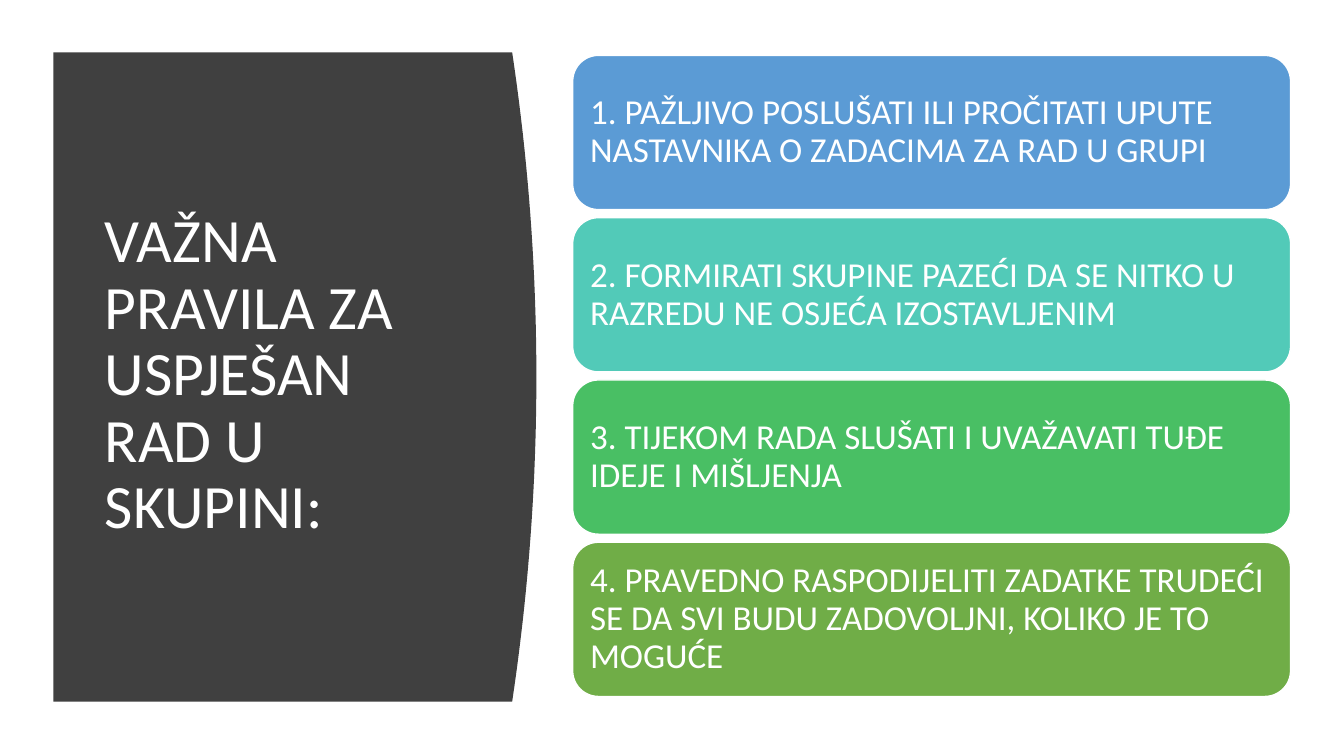
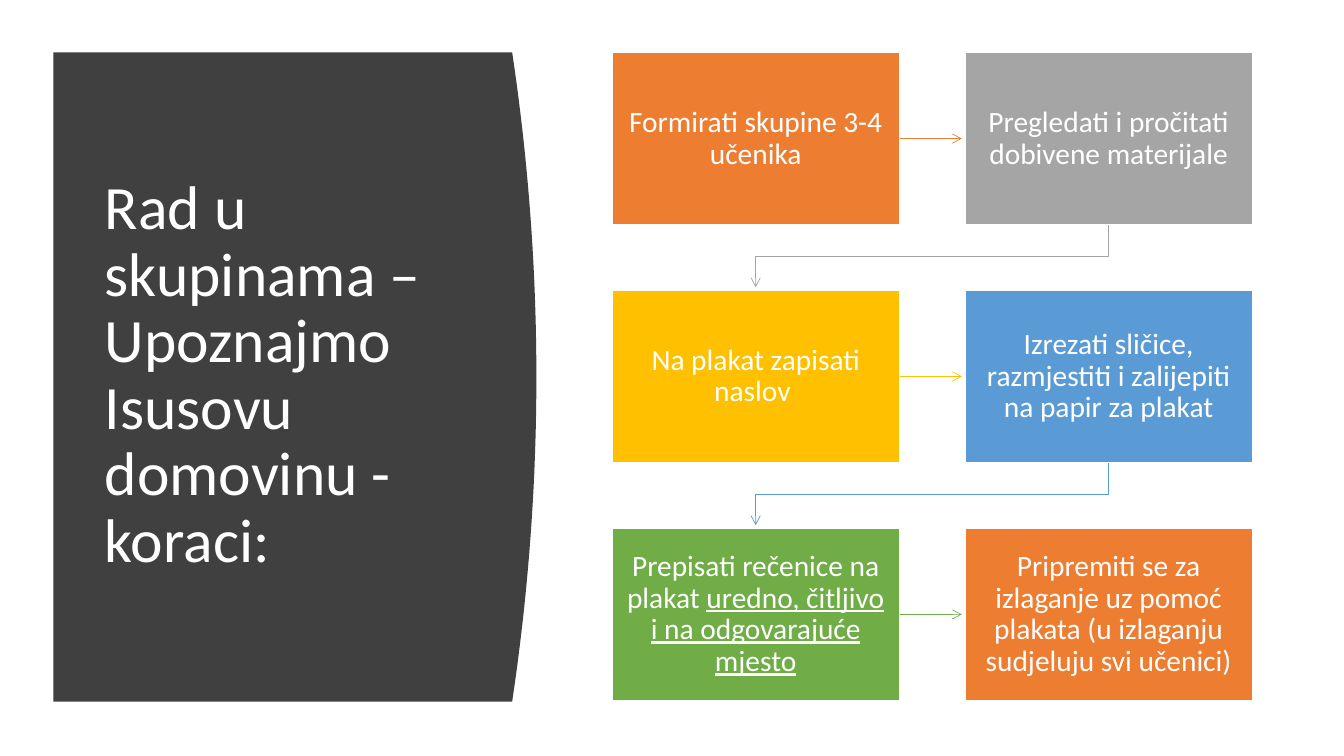
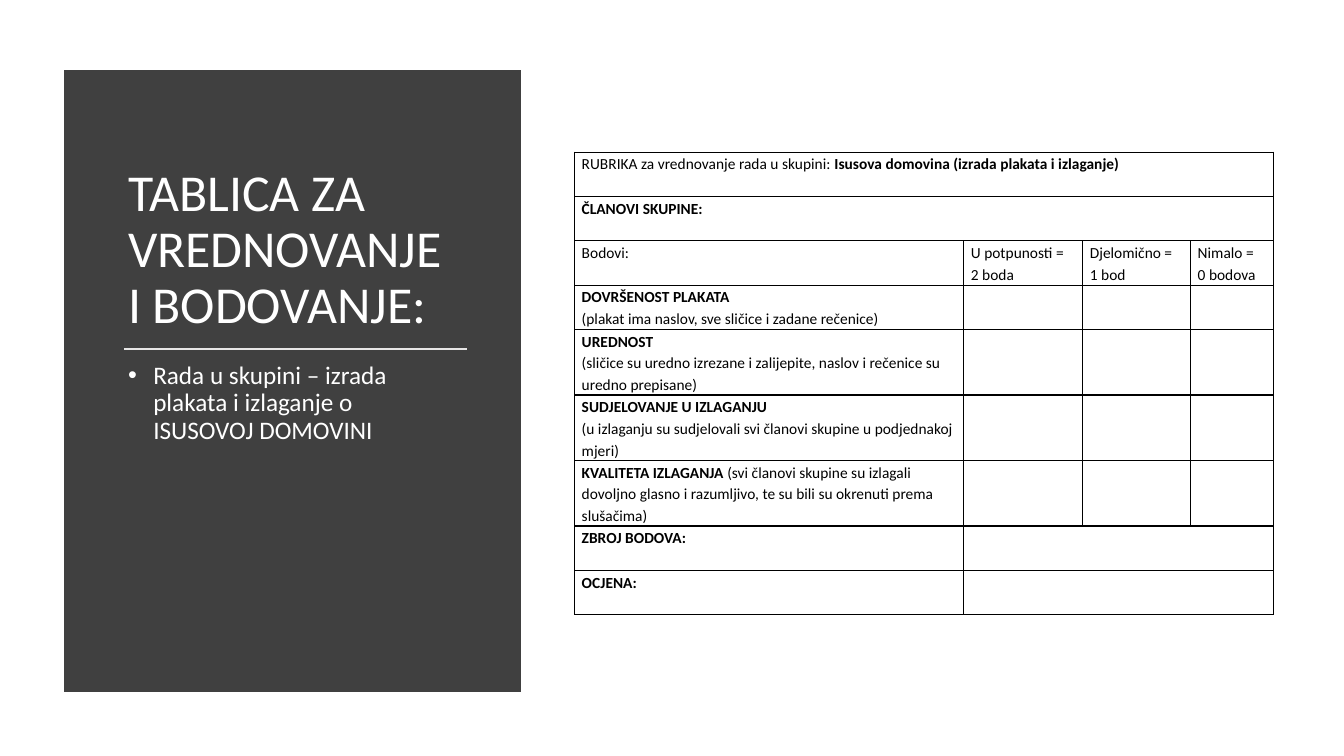
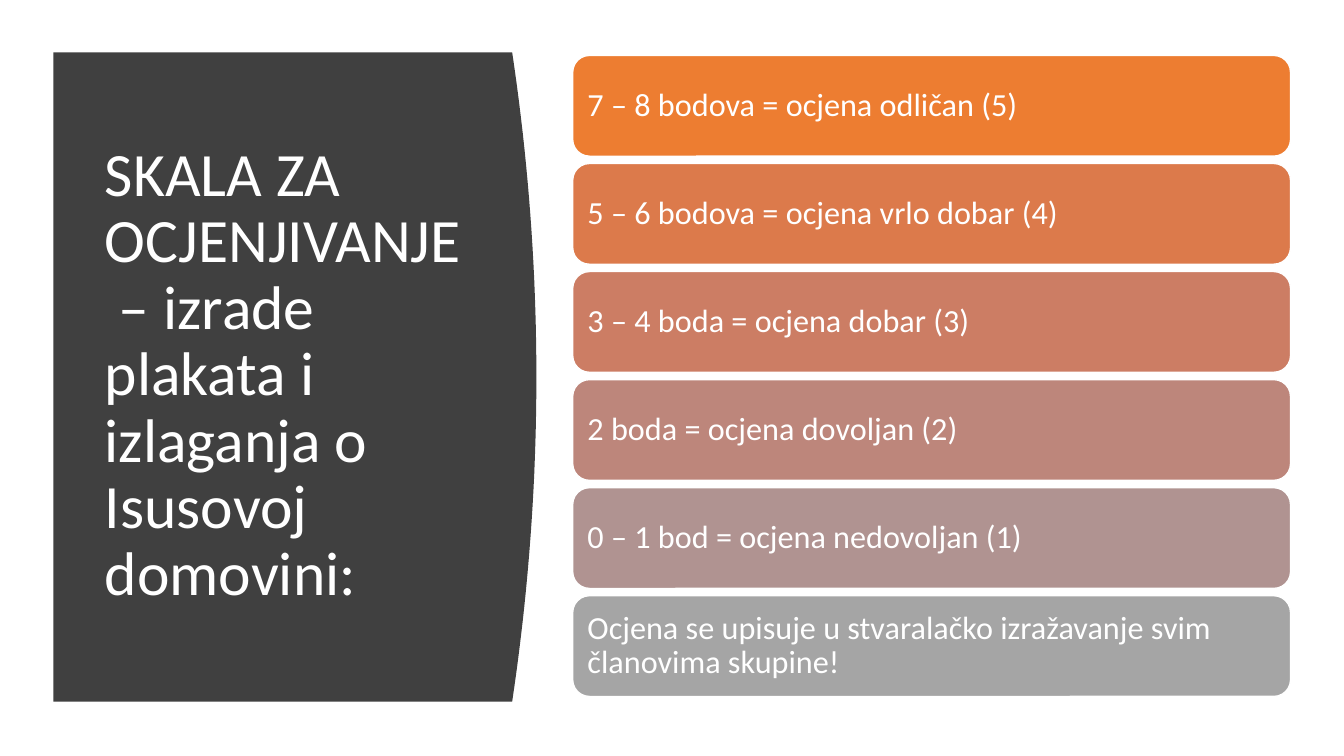
"""Build four slides on the rules, steps and grading of group work."""
from dataclasses import dataclass

import lxml.etree
import pptx
import pptx.dml.color
import pptx.enum.shapes
import pptx.enum.text
import pptx.oxml.ns
import pptx.presentation
import pptx.shapes.autoshape
import pptx.shapes.connector
import pptx.slide
import pptx.table
import pptx.text.text
import pptx.util

Inches = pptx.util.Inches
Pt = pptx.util.Pt
RGBColor = pptx.dml.color.RGBColor
Anchor = pptx.enum.text.MSO_ANCHOR
Align = pptx.enum.text.PP_ALIGN
Preset = pptx.enum.shapes.MSO_SHAPE
Link = pptx.enum.shapes.MSO_CONNECTOR
qn = pptx.oxml.ns.qn

FONT = "Calibri"
WHITE = RGBColor(0xFF, 0xFF, 0xFF)
BLACK = RGBColor(0x00, 0x00, 0x00)
CHARCOAL = RGBColor(0x40, 0x40, 0x40)
PALE = RGBColor(0xE7, 0xE6, 0xE6)
ORANGE = RGBColor(0xED, 0x7D, 0x31)
GREY = RGBColor(0xA5, 0xA5, 0xA5)
GOLD = RGBColor(0xFF, 0xC0, 0x00)
BLUE = RGBColor(0x5B, 0x9B, 0xD5)
GREEN = RGBColor(0x70, 0xAD, 0x47)
TEAL = RGBColor(0x52, 0xCA, 0xB8)
EMERALD = RGBColor(0x49, 0xBF, 0x64)
COPPER = RGBColor(0xDC, 0x7A, 0x4B)
CLAY = RGBColor(0xCC, 0x7D, 0x64)
ROSE = RGBColor(0xBD, 0x86, 0x7B)
MAUVE = RGBColor(0xB0, 0x93, 0x91)

TITLE_ONLY = 5
TITLE_AND_BODY = 1


@dataclass(frozen=True)
class Box:
    """A rectangle in inches."""

    left: float
    top: float
    width: float
    height: float

    def lengths(self) -> tuple[pptx.util.Length, ...]:
        """Return the four measures as lengths."""
        return tuple(Inches(v) for v in (self.left, self.top, self.width, self.height))


@dataclass(frozen=True)
class Card:
    """A coloured block of text, with an optional underlined ending."""

    text: str
    color: RGBColor
    underlined: str = ""


@dataclass(frozen=True)
class Run:
    """A piece of table text."""

    text: str
    bold: bool = False


Line = tuple[Run, ...]
CellLines = tuple[Line, ...]

PANEL = Box(0.53, 0.52, 4.55, 6.44)
PANEL_BULGE = 0.24
PANEL_STEPS = 40
TITLE_BOX = Box(0.94, 1.11, 3.74, 5.24)
STACK = Box(5.68, 0.55, 7.12, 6.36)
FLOW = Box(6.07, 0.52, 2.85, 1.71)
FLOW_COLUMNS = 2
FLOW_PITCH_X = 3.5
FLOW_PITCH_Y = 2.36
ARROW_LENGTH = 0.62

RULES = (
    Card("1. PAŽLJIVO POSLUŠATI ILI PROČITATI UPUTE NASTAVNIKA O ZADACIMA ZA RAD U GRUPI", BLUE),
    Card("2. FORMIRATI SKUPINE PAZEĆI DA SE NITKO U RAZREDU NE OSJEĆA IZOSTAVLJENIM", TEAL),
    Card("3. TIJEKOM RADA SLUŠATI I UVAŽAVATI TUĐE IDEJE I MIŠLJENJA", EMERALD),
    Card("4. PRAVEDNO RASPODIJELITI ZADATKE TRUDEĆI SE DA SVI BUDU ZADOVOLJNI, KOLIKO JE TO MOGUĆE", GREEN),
)
STEPS = (
    Card("Formirati skupine 3-4 učenika", ORANGE),
    Card("Pregledati i pročitati dobivene materijale", GREY),
    Card("Na plakat zapisati naslov ", GOLD),
    Card("Izrezati sličice, razmjestiti i zalijepiti na papir za plakat", BLUE),
    Card("Prepisati rečenice na plakat ", GREEN, "uredno, čitljivo i na odgovarajuće mjesto"),
    Card("Pripremiti se za izlaganje uz pomoć plakata (u izlaganju sudjeluju svi učenici)", ORANGE),
)
GRADES = (
    Card("7 – 8 bodova = ocjena odličan (5)", ORANGE),
    Card("5 – 6 bodova = ocjena vrlo dobar (4)", COPPER),
    Card("3 – 4 boda = ocjena dobar (3)", CLAY),
    Card("2 boda = ocjena dovoljan (2)", ROSE),
    Card("0 – 1 bod = ocjena nedovoljan (1)", MAUVE),
    Card("Ocjena se upisuje u stvaralačko izražavanje svim članovima skupine!", GREY),
)

TABLE_BOX = Box(5.7, 1.51, 6.93, 4.59)
COLUMN_WIDTHS = (3.86, 1.18, 1.07, 0.82)
ROW_HEIGHTS = (0.44, 0.44, 0.44, 0.44, 0.65, 0.65, 0.65, 0.44, 0.44)
MERGES = ((0, 0), (1, 0), (7, 1), (8, 1))
RUBRIC: tuple[tuple[CellLines, ...], ...] = (
    (
        (
            (
                Run("RUBRIKA za vrednovanje rada u skupini: "),
                Run("Isusova domovina (izrada plakata i izlaganje)", True),
            ),
        ),
    ),
    (((Run("ČLANOVI SKUPINE:", True),),),),
    (
        ((Run("Bodovi:"),),),
        ((Run("U potpunosti ="),), (Run("2 boda"),)),
        ((Run("Djelomično ="),), (Run("1 bod"),)),
        ((Run("Nimalo ="),), (Run("0 bodova"),)),
    ),
    (
        (
            (Run("DOVRŠENOST PLAKATA", True),),
            (Run("(plakat ima naslov, sve sličice i zadane rečenice)"),),
        ),
    ),
    (
        (
            (Run("UREDNOST", True),),
            (Run("(sličice su uredno izrezane i zalijepite, naslov i rečenice su uredno prepisane)"),),
        ),
    ),
    (
        (
            (Run("SUDJELOVANJE U IZLAGANJU", True),),
            (Run("(u izlaganju su sudjelovali svi članovi skupine u podjednakoj mjeri)"),),
        ),
    ),
    (
        (
            (
                Run("KVALITETA IZLAGANJA", True),
                Run(
                    " (svi članovi skupine su izlagali dovoljno glasno i razumljivo, "
                    "te su bili su okrenuti prema slušačima)"
                ),
            ),
        ),
    ),
    (((Run("ZBROJ BODOVA:", True),),),),
    (((Run("OCJENA:", True),),),),
)


def style_paragraph(
    p: pptx.text.text._Paragraph,
    size: float,
    color: RGBColor = WHITE,
    align: Align = Align.LEFT,
    spacing: float = 0.9,
) -> None:
    """Set the font, alignment and line spacing of a paragraph."""
    p.alignment = align
    p.line_spacing = spacing
    p.font.name = FONT
    p.font.size = Pt(size)
    p.font.color.rgb = color


def place_text(
    sp: pptx.shapes.autoshape.Shape, box: Box, text: str, size: float, anchor: Anchor
) -> pptx.text.text._Paragraph:
    """Move a placeholder, fill it and return its paragraph."""
    sp.left, sp.top, sp.width, sp.height = box.lengths()
    tf = sp.text_frame
    tf.auto_size = pptx.enum.text.MSO_AUTO_SIZE.NONE
    tf.vertical_anchor = anchor
    tf.text = text
    p = tf.paragraphs[0]
    style_paragraph(p, size)
    return p


def send_to_back(s: pptx.slide.Slide, sp: pptx.shapes.autoshape.Shape) -> None:
    """Put a shape behind everything else on its slide."""
    s.shapes.element.insert(2, sp.element)


def add_panel_slide(prs: pptx.presentation.Presentation, title: str) -> pptx.slide.Slide:
    """Add a slide with the curved dark panel and its title."""
    s = prs.slides.add_slide(prs.slide_layouts[TITLE_ONLY])
    right = PANEL.left + PANEL.width
    bottom = PANEL.top + PANEL.height
    curve = []
    for i in range(PANEL_STEPS + 1):
        t = i / PANEL_STEPS
        x = right + PANEL_BULGE * (1 - (2 * t - 1) ** 2)
        curve.append((Inches(x), Inches(PANEL.top + PANEL.height * t)))
    builder = s.shapes.build_freeform(Inches(PANEL.left), Inches(PANEL.top))
    builder.add_line_segments([*curve, (Inches(PANEL.left), Inches(bottom))])
    sp = builder.convert_to_shape()
    sp.shadow.inherit = False
    sp.fill.solid()
    sp.fill.fore_color.rgb = CHARCOAL
    sp.line.fill.background()
    send_to_back(s, sp)
    place_text(s.shapes.title, TITLE_BOX, title, 44, Anchor.MIDDLE)
    return s


def add_card(
    s: pptx.slide.Slide,
    card: Card,
    box: Box,
    preset: Preset,
    size: float,
    align: Align,
    insets: tuple[float, float],
) -> None:
    """Draw one coloured block with its text."""
    sp = s.shapes.add_shape(preset, *box.lengths())
    sp.shadow.inherit = False
    sp.fill.solid()
    sp.fill.fore_color.rgb = card.color
    sp.line.color.rgb = WHITE
    sp.line.width = Pt(1)
    tf = sp.text_frame
    tf.word_wrap = True
    tf.vertical_anchor = Anchor.MIDDLE
    tf.margin_left = tf.margin_right = Inches(insets[0])
    tf.margin_top = tf.margin_bottom = Inches(insets[1])
    p = tf.paragraphs[0]
    style_paragraph(p, size, align=align)
    p.add_run().text = card.text
    if card.underlined:
        r = p.add_run()
        r.text = card.underlined
        r.font.underline = True


def add_stack(s: pptx.slide.Slide, cards: tuple[Card, ...], height: float, size: float) -> None:
    """Spread rounded cards evenly down the right side."""
    pitch = (STACK.height - height) / (len(cards) - 1)
    for i, card in enumerate(cards):
        box = Box(STACK.left, STACK.top + i * pitch, STACK.width, height)
        add_card(s, card, box, Preset.ROUNDED_RECTANGLE, size, Align.LEFT, (0.1, 0.1))


def add_line(
    s: pptx.slide.Slide,
    kind: Link,
    start: tuple[float, float],
    end: tuple[float, float],
    color: RGBColor,
    width: float,
) -> pptx.shapes.connector.Connector:
    """Draw a connector without a shadow."""
    c = s.shapes.add_connector(kind, *(Inches(v) for v in (*start, *end)))
    c.line.color.rgb = color
    c.line.width = Pt(width)
    lxml.etree.SubElement(c.element.spPr, qn("a:effectLst"))
    return c


def add_arrow(s: pptx.slide.Slide, box: Box, turns: bool, color: RGBColor) -> None:
    """Lead from one step to the next, across or down to a new row."""
    half = ARROW_LENGTH / 2
    if turns:
        x = box.left + box.width / 2 - FLOW_PITCH_X / 2
        y = box.top + box.height + half
        reach = FLOW_PITCH_X / 2
        c = add_line(s, Link.ELBOW, (x - half, y - reach), (x + half, y + reach), color, 0.5)
        c.element.spPr.find(qn("a:xfrm")).set("rot", "5400000")
    else:
        x = box.left + box.width
        y = box.top + box.height / 2
        c = add_line(s, Link.STRAIGHT, (x, y), (x + ARROW_LENGTH, y), color, 0.5)
    lxml.etree.SubElement(c.line._get_or_add_ln(), qn("a:tailEnd"), type="arrow")


def add_flow(s: pptx.slide.Slide, cards: tuple[Card, ...]) -> None:
    """Draw the steps in rows, joined by arrows."""
    for i, card in enumerate(cards):
        row, column = divmod(i, FLOW_COLUMNS)
        left = FLOW.left + column * FLOW_PITCH_X
        box = Box(left, FLOW.top + row * FLOW_PITCH_Y, FLOW.width, FLOW.height)
        if i < len(cards) - 1:
            add_arrow(s, box, column == FLOW_COLUMNS - 1, card.color)
        add_card(s, card, box, Preset.RECTANGLE, 21, Align.CENTER, (0.14, 0.15))


def border_cell(cell: pptx.table._Cell) -> None:
    """Give a cell thin black borders and no fill."""
    tcPr = cell._tc.get_or_add_tcPr()
    for side in ("a:lnL", "a:lnR", "a:lnT", "a:lnB"):
        ln = lxml.etree.SubElement(tcPr, qn(side), w=str(Pt(1)))
        fill = lxml.etree.SubElement(ln, qn("a:solidFill"))
        lxml.etree.SubElement(fill, qn("a:srgbClr"), val=str(BLACK))
    cell.fill.background()


def fill_cell(cell: pptx.table._Cell, lines: CellLines) -> None:
    """Write the lines of a cell."""
    cell.margin_left = cell.margin_right = Inches(0.07)
    cell.margin_top = cell.margin_bottom = 0
    tf = cell.text_frame
    for i, line in enumerate(lines):
        p = tf.add_paragraph() if i else tf.paragraphs[0]
        style_paragraph(p, 11, BLACK, spacing=1.15)
        for run in line:
            r = p.add_run()
            r.text = run.text
            r.font.bold = run.bold


def add_rubric(s: pptx.slide.Slide) -> None:
    """Draw the grading table."""
    frame = s.shapes.add_table(len(ROW_HEIGHTS), len(COLUMN_WIDTHS), *TABLE_BOX.lengths())
    table = frame.table
    table.first_row = table.horz_banding = False
    for column, width in zip(table.columns, COLUMN_WIDTHS):
        column.width = Inches(width)
    for row, height in zip(table.rows, ROW_HEIGHTS):
        row.height = Inches(height)
    for cell in table.iter_cells():
        border_cell(cell)
    for i, cells in enumerate(RUBRIC):
        for j, lines in enumerate(cells):
            fill_cell(table.cell(i, j), lines)
    for i, j in MERGES:
        table.cell(i, j).merge(table.cell(i, len(COLUMN_WIDTHS) - 1))


def add_rubric_slide(prs: pptx.presentation.Presentation) -> None:
    """Add the slide with the grading table."""
    s = prs.slides.add_slide(prs.slide_layouts[TITLE_AND_BODY])
    sp = s.shapes.add_shape(Preset.RECTANGLE, *Box(0.7, 0.76, 4.4, 6.04).lengths())
    sp.shadow.inherit = False
    sp.fill.solid()
    sp.fill.fore_color.rgb = CHARCOAL
    sp.line.color.rgb = CHARCOAL
    sp.line.width = Pt(10)
    lxml.etree.SubElement(sp.line._get_or_add_ln(), qn("a:miter"), lim="800000")
    send_to_back(s, sp)
    title = "TABLICA ZA VREDNOVANJE I BODOVANJE:"
    place_text(s.shapes.title, Box(1.17, 1.11, 3.44, 2.26), title, 37, Anchor.BOTTOM)
    add_line(s, Link.STRAIGHT, (1.23, 3.46), (4.63, 3.46), PALE, 1.75)
    topic = "Rada u skupini – izrada plakata i izlaganje o ISUSOVOJ DOMOVINI"
    p = place_text(s.placeholders[1], Box(1.17, 3.55, 3.44, 2.44), topic, 18, Anchor.TOP)
    p.space_before = Pt(10)
    pPr = p._p.get_or_add_pPr()
    pPr.set("marL", str(Inches(0.25)))
    pPr.set("indent", str(Inches(-0.25)))
    add_rubric(s)


def main() -> None:
    """Build and save the presentation."""
    prs = pptx.Presentation()
    prs.slide_width, prs.slide_height = Inches(13.33), Inches(7.5)
    s = add_panel_slide(prs, "VAŽNA PRAVILA ZA USPJEŠAN RAD U SKUPINI:")
    add_stack(s, RULES, 1.53, 25)
    s = add_panel_slide(prs, "Rad u skupinama – Upoznajmo Isusovu domovinu - koraci:")
    add_flow(s, STEPS)
    add_rubric_slide(prs)
    s = add_panel_slide(prs, "SKALA ZA OCJENJIVANJE  – izrade plakata i izlaganja o Isusovoj domovini:")
    add_stack(s, GRADES, 1, 23)
    prs.save("out.pptx")


if __name__ == "__main__":
    main()
